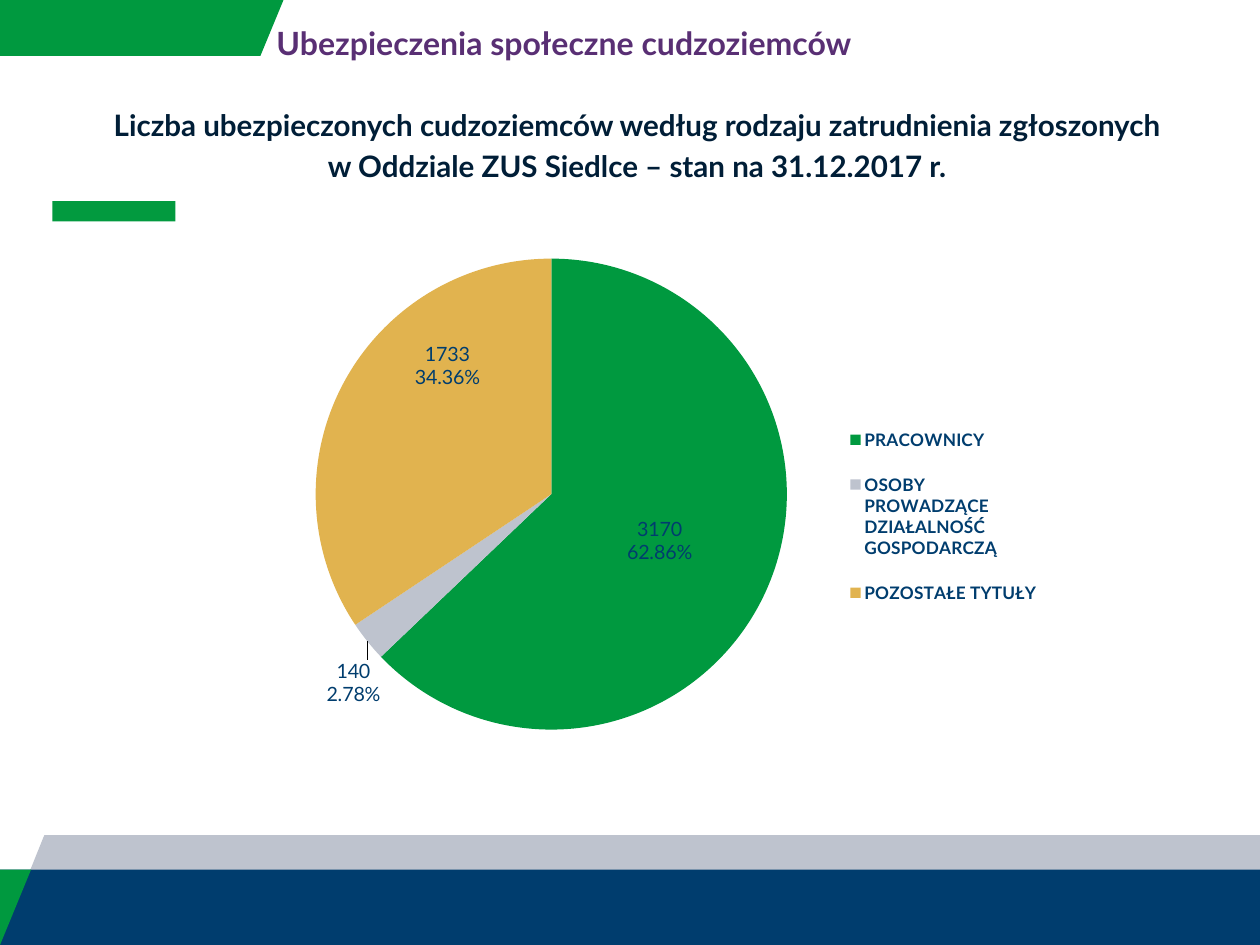
from dataclasses import dataclass

from lxml import etree
from pptx import Presentation
from pptx.chart.data import CategoryChartData
from pptx.dml.color import RGBColor
from pptx.enum.chart import XL_CHART_TYPE, XL_LEGEND_POSITION
from pptx.enum.text import MSO_ANCHOR, MSO_AUTO_SIZE, PP_ALIGN
from pptx.oxml import parse_xml
from pptx.oxml.ns import nsdecls, qn
from pptx.util import Pt

PIE = XL_CHART_TYPE.PIE
LEGEND_RIGHT = XL_LEGEND_POSITION.RIGHT
TOP = MSO_ANCHOR.TOP
NO_AUTOFIT = MSO_AUTO_SIZE.NONE
LEFT, CENTER = PP_ALIGN.LEFT, PP_ALIGN.CENTER

PX = 9144  # EMU per px, 100 px to the inch
SLIDE_WIDTH, SLIDE_HEIGHT = 1422, 1067
FONT = "Lato"
GREEN, GREY, NAVY, GOLD = "00993F", "BEC3CE", "003D6E", "E1B34F"
ACCENT_GREEN, PURPLE, DARK_NAVY = "029A3F", "592F74", "001E37"


@dataclass
class Band:
    points: list[tuple[int, int]]
    color: str


@dataclass
class Slice:
    category: str
    value: int
    color: str
    label_position: str
    label_shift: tuple[float, float] = (0, 0)


BANDS = [
    Band([(320, 0), (294, 63), (0, 63), (0, 0)], GREEN),
    Band([(0, 1067), (50, 943), (1422, 943), (1422, 1067)], GREY),
]
FOOTER_TOP = 982
CORNER = Band([(0, FOOTER_TOP), (0, 1067), (35, FOOTER_TOP)], GREEN)

SLICES = [
    Slice("PRACOWNICY", 3170, GREEN, "ctr"),
    Slice("OSOBY PROWADZĄCE DZIAŁALNOŚĆ GOSPODARCZĄ", 140, GREY, "outEnd", (0.02, 0.03)),
    Slice("POZOSTAŁE TYTUŁY", 1733, GOLD, "ctr", (0, -0.15)),
]
HEADING = [
    "Liczba ubezpieczonych cudzoziemców według rodzaju zatrudnienia zgłoszonych",
    "w Oddziale ZUS Siedlce – stan na 31.12.2017 r.",
]


def rgb(color: str) -> RGBColor:
    return RGBColor.from_string(color)


def box(*lengths: int) -> list[int]:
    return [length * PX for length in lengths]


def set_font(font, size: float, color: str, bold: bool = False) -> None:
    font.name, font.size, font.bold = FONT, Pt(size), bold
    font.color.rgb = rgb(color)


def paint(shape, color: str) -> None:
    shape.shadow.inherit = False
    shape.fill.solid()
    shape.fill.fore_color.rgb = rgb(color)
    shape.line.fill.background()


def add_band(slide, band: Band) -> None:
    builder = slide.shapes.build_freeform(*band.points[0], scale=PX)
    builder.add_line_segments(band.points[1:], close=True)
    paint(builder.convert_to_shape(), band.color)


def add_bar(slide, left: int, top: int, width: int, height: int, color: str) -> None:
    paint(slide.shapes.add_shape(1, *box(left, top, width, height)), color)


def manual_layout(**settings):
    """Build a c:layout element from manualLayout settings."""
    layout = parse_xml(f"<c:layout {nsdecls('c')}><c:manualLayout/></c:layout>")
    for name, value in settings.items():
        etree.SubElement(layout[0], qn(f"c:{name}")).set("val", str(value))
    return layout


def point_label(index: int, pie_slice: Slice):
    shift_x, shift_y = pie_slice.label_shift
    label = parse_xml(
        f'<c:dLbl {nsdecls("c")}><c:idx val="{index}"/>'
        f'<c:dLblPos val="{pie_slice.label_position}"/>'
        '<c:showLegendKey val="0"/><c:showVal val="1"/><c:showCatName val="0"/>'
        '<c:showSerName val="0"/><c:showPercent val="1"/><c:showBubbleSize val="0"/>'
        "<c:separator>\n</c:separator></c:dLbl>"
    )
    if any(pie_slice.label_shift):
        label.insert(1, manual_layout(x=shift_x, y=shift_y))
    return label


def add_pie(slide) -> None:
    data = CategoryChartData()
    data.categories = [pie_slice.category for pie_slice in SLICES]
    data.add_series("Series 1", [pie_slice.value for pie_slice in SLICES])
    chart = slide.shapes.add_chart(PIE, *box(223, 281, 962, 554), data).chart
    chart.has_title = False
    set_font(chart.font, 10, NAVY)
    plot_area = chart.plots[0]._element.getparent()
    for old_layout in plot_area.findall(qn("c:layout")):
        plot_area.remove(old_layout)
    plot_area.insert(0, manual_layout(
        layoutTarget="inner", xMode="edge", yMode="edge", x=0.07, y=0.02, w=0.69, h=0.96))

    # Legend
    chart.has_legend = True
    legend = chart.legend
    legend.position = LEGEND_RIGHT
    legend.include_in_layout = False
    set_font(legend.font, 14, NAVY, bold=True)
    for old_layout in legend._element.findall(qn("c:layout")):
        legend._element.remove(old_layout)
    legend._element.find(qn("c:legendPos")).addnext(manual_layout(
        xMode="edge", yMode="edge", x=0.76, y=0.32, w=0.23, h=0.45))

    # Slices and their labels
    series = chart.plots[0].series[0]
    labels = series.data_labels
    labels.show_value = labels.show_percentage = True
    labels.number_format, labels.number_format_is_linked = "0.00%", False
    set_font(labels.font, 16, NAVY)
    for index, pie_slice in enumerate(SLICES):
        fill = series.points[index].format.fill
        fill.solid()
        fill.fore_color.rgb = rgb(pie_slice.color)
        labels._element.insert(index, point_label(index, pie_slice))


def add_title(slide) -> None:
    title = slide.shapes.title
    title.left, title.top, title.width, title.height = box(302, 0, 961, 84)
    frame = title.text_frame
    frame.text = "Ubezpieczenia społeczne cudzoziemców"
    frame.vertical_anchor, frame.auto_size = TOP, NO_AUTOFIT
    paragraph = frame.paragraphs[0]
    paragraph.alignment, paragraph.line_spacing = LEFT, 1.5
    set_font(paragraph.font, 26, PURPLE, bold=True)


def add_heading(slide) -> None:
    frame = slide.shapes.add_textbox(*box(50, 116, 1338, 112)).text_frame
    frame.word_wrap = True
    frame.text = "\n".join(HEADING)
    for index, paragraph in enumerate(frame.paragraphs):
        paragraph.alignment = CENTER
        paragraph.space_before = Pt(4.8 if index else 0)
        set_font(paragraph.font, 24, DARK_NAVY, bold=True)


def main() -> None:
    presentation = Presentation()
    presentation.slide_width, presentation.slide_height = box(SLIDE_WIDTH, SLIDE_HEIGHT)
    slide = presentation.slides.add_slide(presentation.slide_layouts[5])

    # Template bands
    for band in BANDS:
        add_band(slide, band)
    add_bar(slide, 0, FOOTER_TOP, SLIDE_WIDTH, SLIDE_HEIGHT - FOOTER_TOP, NAVY)
    add_band(slide, CORNER)

    # Content
    add_title(slide)
    add_bar(slide, 59, 227, 139, 23, ACCENT_GREEN)
    add_heading(slide)
    add_pie(slide)
    presentation.save("out.pptx")


if __name__ == "__main__":
    main()
